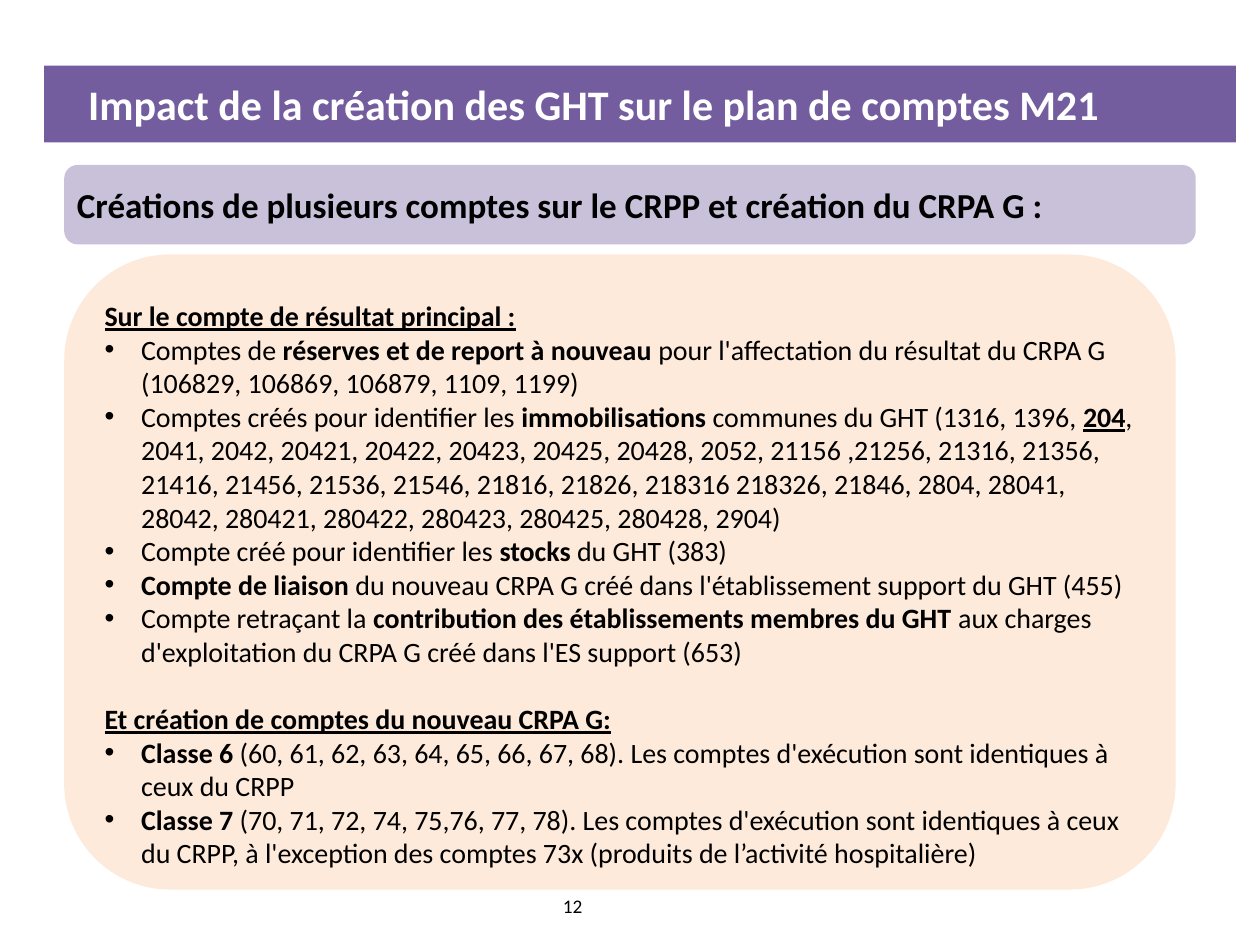
from lxml import etree
from pptx import Presentation
from pptx.dml.color import RGBColor
from pptx.enum import shapes, text
from pptx.oxml import ns
from pptx.util import Emu, Inches, Pt

PURPLE = RGBColor(0x73, 0x5D, 0x9F)
LILAC = RGBColor(0xC9, 0xC0, 0xDA)
PEACH = RGBColor(0xFD, 0xEA, 0xDA)
WHITE = RGBColor(255, 255, 255)
BLACK = RGBColor(0, 0, 0)

TITLE = "Impact de la création des GHT sur le plan de comptes M21"
SUBTITLE = "Créations de plusieurs comptes sur le CRPP et création du CRPA G :"
PAGE_NUMBER = "12"

# Each item is a list of (wording, style); b is bold, u is underlined.
SECTIONS = [
    ("Sur le compte de résultat principal :", [
        [("Comptes de ", ""), ("réserves et de report à nouveau ", "b"),
         ("pour l'affectation du résultat du CRPA G "
          "(106829, 106869, 106879, 1109, 1199)", "")],
        [("Comptes créés pour identifier les ", ""), ("immobilisations", "b"),
         (" communes du GHT (1316, 1396, ", ""), ("204", "bu"),
         (", 2041, 2042, 20421, 20422, 20423, 20425, 20428, 2052, 21156 ,21256, "
          "21316, 21356, 21416, 21456, 21536, 21546, 21816, 21826, 218316 218326, "
          "21846, 2804, 28041, 28042, 280421, 280422, 280423, 280425, 280428, 2904)", "")],
        [("Compte créé pour identifier les ", ""), ("stocks", "b"),
         (" du GHT (383)", "")],
        [("Compte de liaison ", "b"),
         ("du nouveau CRPA G créé dans l'établissement support du GHT (455)", "")],
        [("Compte retraçant la ", ""),
         ("contribution des établissements membres du GHT ", "b"),
         ("aux charges d'exploitation du CRPA G créé dans l'ES support (653)", "")],
    ]),
    ("Et création de comptes du nouveau CRPA G:", [
        [("Classe 6", "b"),
         (" (60, 61, 62, 63, 64, 65, 66, 67, 68). "
          "Les comptes d'exécution sont identiques à ceux du CRPP", "")],
        [("Classe 7", "b"),
         (" (70, 71, 72, 74, 75,76, 77, 78). "
          "Les comptes d'exécution sont identiques à ceux du CRPP, à l'exception des "
          "comptes 73x (produits de l’activité hospitalière)", "")],
    ]),
]


def place(shape, left, top, width, height):
    shape.left, shape.top = Inches(left), Inches(top)
    shape.width, shape.height = Inches(width), Inches(height)


def set_frame(shape, anchor, left=0.07, top=0.04):
    frame = shape.text_frame
    frame.word_wrap = True
    frame.auto_size = text.MSO_AUTO_SIZE.NONE
    frame.vertical_anchor = anchor
    frame.margin_left, frame.margin_right = Inches(left), Inches(0.07)
    frame.margin_top, frame.margin_bottom = Inches(top), Inches(0.04)
    return frame


def set_font(para, size, color=BLACK, bold=False):
    para.alignment = text.PP_ALIGN.LEFT
    font = para.font
    font.name, font.size, font.bold = "Calibri", Pt(size), bold
    font.color.rgb = color


def add_panel(page, color, *box):
    panel = page.shapes.add_shape(
        shapes.MSO_SHAPE.ROUNDED_RECTANGLE, *(Inches(side) for side in box))
    panel.shadow.inherit = False
    panel.fill.solid()
    panel.fill.fore_color.rgb = color
    panel.line.fill.background()
    return panel


def add_item(frame, spans, bullet, space_before=0):
    first = frame.paragraphs[0]
    para = first if not first.runs else frame.add_paragraph()
    props = para._p.get_or_add_pPr()
    indent = Inches(0.29) if bullet else Emu(0)
    props.set("marL", str(indent))
    props.set("indent", str(-indent))
    if bullet:
        etree.SubElement(props, ns.qn("a:buFont")).set("typeface", "Arial")
        etree.SubElement(props, ns.qn("a:buChar")).set("char", "•")
    else:
        etree.SubElement(props, ns.qn("a:buNone"))
    para.space_before = Pt(space_before)
    set_font(para, 16)
    for wording, style in spans:
        span = para.add_run()
        span.text = wording
        if "b" in style:
            span.font.bold = True
        if "u" in style:
            span.font.underline = True


def main():
    deck = Presentation()
    deck.slide_width, deck.slide_height = Inches(10), Inches(7.5)
    page = deck.slides.add_slide(deck.slide_layouts[1])
    title, body = page.placeholders

    place(title, 0.35, 0.52, 9.46, 0.61)
    title.fill.solid()
    title.fill.fore_color.rgb = PURPLE
    frame = set_frame(title, text.MSO_ANCHOR.MIDDLE, left=0.35)
    frame.text = TITLE
    set_font(frame.paragraphs[0], 24, WHITE, bold=True)

    subtitle = add_panel(page, LILAC, 0.51, 1.31, 8.98, 0.63)
    frame = set_frame(subtitle, text.MSO_ANCHOR.MIDDLE)
    frame.text = SUBTITLE
    set_font(frame.paragraphs[0], 20, bold=True)

    add_panel(page, PEACH, 0.51, 2.02, 8.82, 5.04)
    page.shapes._spTree.append(body._element)  # bring the list in front of its panel
    place(body, 0.76, 2.27, 8.33, 4.7)
    frame = set_frame(body, text.MSO_ANCHOR.TOP, top=0.1)
    for index, (heading, items) in enumerate(SECTIONS):
        add_item(frame, [(heading, "bu")], bullet=False,
                 space_before=19.2 if index else 0)
        for spans in items:
            add_item(frame, spans, bullet=True)

    number = page.shapes.add_textbox(
        Inches(4.37), Inches(7.05), Inches(2.33), Inches(0.4))
    number.text_frame.word_wrap = True
    number.text_frame.text = PAGE_NUMBER
    set_font(number.text_frame.paragraphs[0], 11)

    deck.save("out.pptx")


if __name__ == "__main__":
    main()
